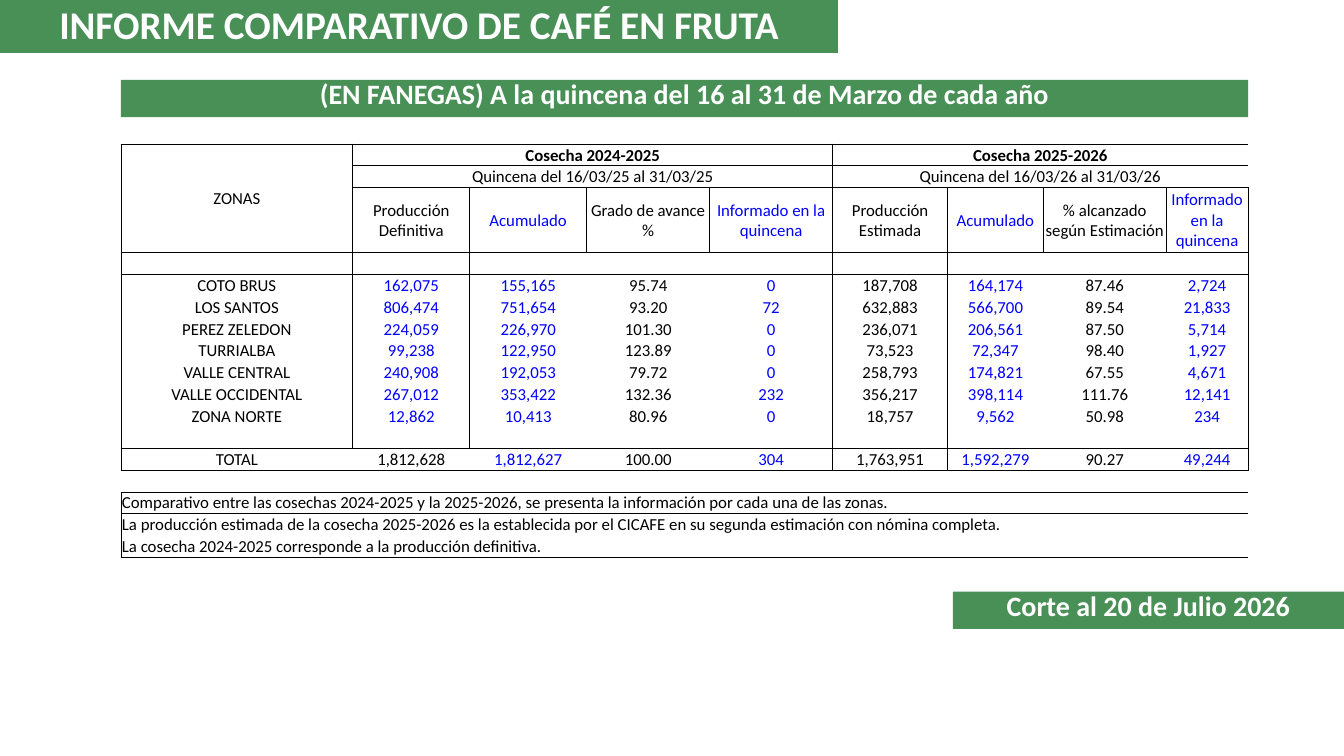
from dataclasses import dataclass

from lxml import etree
from pptx import Presentation
from pptx.dml.color import RGBColor
from pptx.enum.shapes import MSO_SHAPE
from pptx.enum.text import MSO_ANCHOR, PP_ALIGN
from pptx.oxml.ns import qn
from pptx.util import Inches, Pt

RECTANGLE = MSO_SHAPE.RECTANGLE
TOP, MIDDLE, BOTTOM = MSO_ANCHOR.TOP, MSO_ANCHOR.MIDDLE, MSO_ANCHOR.BOTTOM
LEFT, CENTER = PP_ALIGN.LEFT, PP_ALIGN.CENTER
NO_TABLE_STYLE = "{2D5ABB26-0587-4C30-8999-92F81FD0307C}"


@dataclass(frozen=True)
class Theme:
    font: str = "Calibri"
    green: str = "499057"
    white: str = "FFFFFF"
    black: str = "000000"
    blue: str = "0000FF"
    title_size: int = 28
    banner_size: int = 20
    table_size: int = 12
    border_width: float = 0.5


COLUMN_WEIGHTS = [2.3, 1.16, 1.16, 1.22, 1.22, 1.14, 0.95, 1.22, 0.81]
ROW_WEIGHTS = [1, 1, 3] + [1] * 14
HARVESTS = [
    (1, 4, "Cosecha 2024-2025", "Quincena del 16/03/25 al 31/03/25"),
    (5, 8, "Cosecha 2025-2026", "Quincena del 16/03/26 al 31/03/26"),
]
HEADINGS = [
    "Producción Definitiva", "Acumulado", "Grado de avance %", "Informado en la quincena",
    "Producción Estimada", "Acumulado", "% alcanzado según Estimación", "Informado en la quincena",
]
ZONES = [
    ["COTO BRUS", "162,075", "155,165", "95.74", "0", "187,708", "164,174", "87.46", "2,724"],
    ["LOS SANTOS", "806,474", "751,654", "93.20", "72", "632,883", "566,700", "89.54", "21,833"],
    ["PEREZ ZELEDON", "224,059", "226,970", "101.30", "0", "236,071", "206,561", "87.50", "5,714"],
    ["TURRIALBA", "99,238", "122,950", "123.89", "0", "73,523", "72,347", "98.40", "1,927"],
    ["VALLE CENTRAL", "240,908", "192,053", "79.72", "0", "258,793", "174,821", "67.55", "4,671"],
    ["VALLE OCCIDENTAL", "267,012", "353,422", "132.36", "232", "356,217", "398,114", "111.76", "12,141"],
    ["ZONA NORTE", "12,862", "10,413", "80.96", "0", "18,757", "9,562", "50.98", "234"],
]
TOTAL = ["TOTAL", "1,812,628", "1,812,627", "100.00", "304", "1,763,951", "1,592,279", "90.27", "49,244"]
NOTES = [
    "Comparativo entre las cosechas 2024-2025 y la 2025-2026, se presenta la información por cada una de las zonas.",
    "La producción estimada de la cosecha 2025-2026 es la establecida por el CICAFE en su segunda estimación con nómina completa.",
    "La cosecha 2024-2025 corresponde a la producción definitiva.",
]
HEADING_ROW, BODY_START, FIRST_ZONE, BODY_END, TOTAL_ROW, FIRST_NOTE = 2, 3, 4, 11, 12, 14
LAST_ROW, LAST_COLUMN = len(ROW_WEIGHTS) - 1, len(COLUMN_WEIGHTS) - 1
BLUE_COLUMNS = {2, 4, 6, 8}
BLUE_ZONE_COLUMNS = BLUE_COLUMNS | {1}


class ReportSlide:
    def __init__(self, presentation, theme):
        self.theme = theme
        self.width, self.height = presentation.slide_width, presentation.slide_height
        self.slide = presentation.slides.add_slide(presentation.slide_layouts[6])

    def place(self, left, top, width, height):
        """Turn percentages of the slide's size into lengths."""
        sides = (self.width, self.height, self.width, self.height)
        return [int(side * share / 100) for side, share in zip(sides, (left, top, width, height))]

    def format_text(self, paragraph, size, color, bold, alignment):
        paragraph.alignment = alignment
        for run in paragraph.runs:
            run.font.name, run.font.size, run.font.bold = self.theme.font, Pt(size), bold
            run.font.color.rgb = RGBColor.from_string(color)

    def banner(self, text, area, size, bottom_margin=0):
        shape = self.slide.shapes.add_shape(RECTANGLE, *self.place(*area))
        shape.shadow.inherit = False
        shape.fill.solid()
        shape.fill.fore_color.rgb = RGBColor.from_string(self.theme.green)
        shape.line.fill.background()
        frame = shape.text_frame
        frame.word_wrap = True
        frame.vertical_anchor = MIDDLE
        frame.margin_top, frame.margin_bottom = 0, Inches(bottom_margin)
        frame.text = text
        paragraph = frame.paragraphs[0]
        paragraph.line_spacing = 0.9
        self.format_text(paragraph, size, self.theme.white, True, CENTER)

    def table(self, area, column_weights, row_weights):
        left, top, width, height = self.place(*area)
        table = self.slide.shapes.add_table(
            len(row_weights), len(column_weights), left, top, width, height).table
        table.first_row = table.horz_banding = False
        table._tbl.tblPr.find(qn("a:tableStyleId")).text = NO_TABLE_STYLE
        for column, weight in zip(table.columns, column_weights):
            column.width = int(width * weight / sum(column_weights))
        for row, weight in zip(table.rows, row_weights):
            row.height = int(height * weight / sum(row_weights))
        for cell in table.iter_cells():
            cell.margin_left = cell.margin_right = cell.margin_top = Inches(0.01)
            cell.margin_bottom = 0
            end = etree.SubElement(cell.text_frame.paragraphs[0]._p, qn("a:endParaRPr"))
            end.set("sz", str(self.theme.table_size * 100))
        return table

    def cell(self, cell, text, color=None, bold=False, alignment=CENTER, anchor=BOTTOM):
        paragraph = cell.text_frame.paragraphs[0]
        paragraph.text = text
        cell.vertical_anchor = anchor
        self.format_text(paragraph, self.theme.table_size, color or self.theme.black, bold, alignment)

    def outline(self, table, blocks):
        """Border each block of cells, given as first row, first column, last row, last column."""
        for row in range(len(table.rows)):
            for column in range(len(table.columns)):
                cell = table.cell(row, column)
                sides = set()
                for top, left, bottom, right in blocks:
                    if top <= row <= bottom and left <= column <= right:
                        edges = {"L": column == left, "R": column == right,
                                 "T": row == top, "B": row == bottom}
                        sides |= {side for side, on_edge in edges.items() if on_edge}
                for side in "LRTB":
                    if side in sides:
                        self.border(cell, side)
                cell.fill.background()

    def border(self, cell, side):
        line = etree.SubElement(cell._tc.get_or_add_tcPr(), qn(f"a:ln{side}"))
        line.set("w", str(int(Pt(self.theme.border_width))))
        fill = etree.SubElement(line, qn("a:solidFill"))
        etree.SubElement(fill, qn("a:srgbClr")).set("val", self.theme.black)


def fill_harvest_table(report, table):
    def write_row(row, values, blue_columns, first_column=0, anchor=BOTTOM):
        for column, value in enumerate(values, first_column):
            color = report.theme.blue if column in blue_columns else report.theme.black
            report.cell(table.cell(row, column), value, color, anchor=anchor)

    blocks = [(0, 0, HEADING_ROW, 0), (BODY_START, 0, BODY_END, 0),
              (TOTAL_ROW, 0, TOTAL_ROW, LAST_COLUMN), (FIRST_NOTE, 0, LAST_ROW, LAST_COLUMN)]
    blocks += [(HEADING_ROW, column, HEADING_ROW, column) for column in range(1, LAST_COLUMN + 1)]
    table.cell(0, 0).merge(table.cell(HEADING_ROW, 0))
    report.cell(table.cell(0, 0), "ZONAS", anchor=MIDDLE)
    for first, last, harvest, fortnight in HARVESTS:
        for row, text in enumerate((harvest, fortnight)):
            table.cell(row, first).merge(table.cell(row, last))
            report.cell(table.cell(row, first), text, bold=row == 0)
            blocks.append((row, first, row, last))
        blocks.append((BODY_START, first, BODY_END, last))
    blocks.append((TOTAL_ROW, HARVESTS[1][0], TOTAL_ROW, LAST_COLUMN))

    write_row(HEADING_ROW, HEADINGS, BLUE_COLUMNS, first_column=1, anchor=MIDDLE)
    for row, zone in enumerate(ZONES, FIRST_ZONE):
        write_row(row, zone, BLUE_ZONE_COLUMNS)
    write_row(TOTAL_ROW, TOTAL, BLUE_COLUMNS)
    for row, note in enumerate(NOTES, FIRST_NOTE):
        table.cell(row, 0).merge(table.cell(row, LAST_COLUMN))
        report.cell(table.cell(row, 0), note, alignment=LEFT, anchor=TOP)
    report.outline(table, blocks)


def main():
    presentation = Presentation()
    presentation.slide_width, presentation.slide_height = Inches(13.33), Inches(7.5)
    theme = Theme()
    report = ReportSlide(presentation, theme)
    report.banner("INFORME COMPARATIVO DE CAFÉ EN FRUTA", (0, 0, 62.34, 7), theme.title_size)
    report.banner("(EN FANEGAS) A la quincena del 16 al 31 de Marzo de cada año",
                  (9, 10.55, 83.87, 4.95), theme.banner_size, bottom_margin=0.06)
    report.banner("Corte al 20 de Julio 2026", (70.9, 78.25, 29.1, 4.95),
                  theme.banner_size, bottom_margin=0.06)
    table = report.table((9, 19.05, 83.87, 54.67), COLUMN_WEIGHTS, ROW_WEIGHTS)
    fill_harvest_table(report, table)
    presentation.save("out.pptx")


if __name__ == "__main__":
    main()
